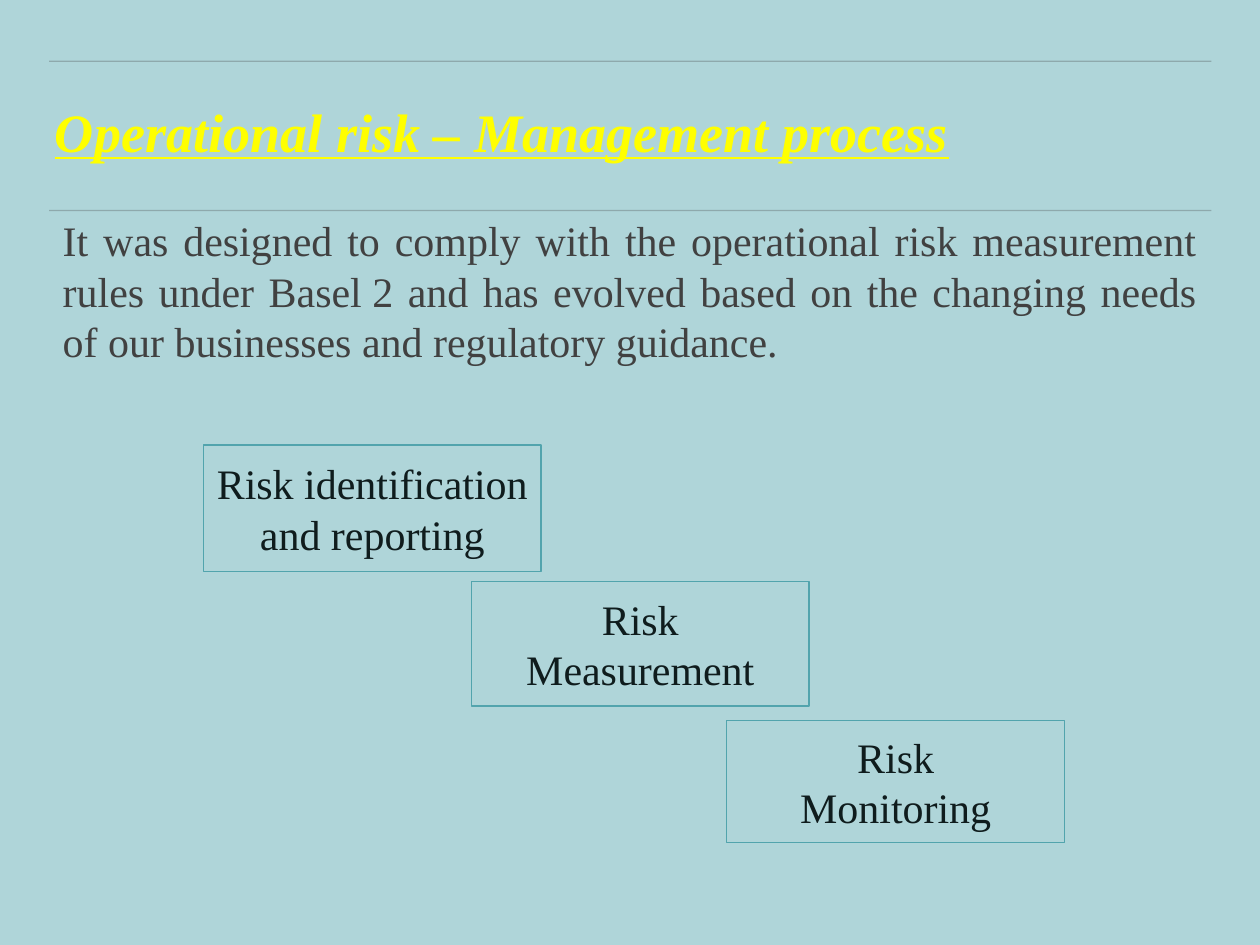
from lxml.etree import SubElement
from pptx import Presentation
from pptx.dml.color import RGBColor
from pptx.enum.shapes import MSO_CONNECTOR, MSO_SHAPE
from pptx.enum.text import MSO_ANCHOR, PP_ALIGN
from pptx.oxml.ns import qn
from pptx.util import Pt

# Content
TITLE = "Operational risk – Management process"
INTRO = ("It was designed to comply with the operational risk measurement rules "
         "under Basel\N{NO-BREAK SPACE}2 and has evolved based on the changing "
         "needs of our businesses and regulatory guidance.")
# Steps: text, left, top, height
STEPS = [
    ("Risk identification and reporting", 165.4, 361.6, 102.8),
    ("Risk\nMeasurement", 383.2, 472.8, 101),
    ("Risk\nMonitoring", 590.7, 585.6, 99.4),
]
STEP_W = 274.4
RULES = [49.8, 171]
RULE_X, RULE_W = 40, 944.4
SIZE = 34.1


def color(code):
    return RGBColor.from_string(code)


def write(shape, text, size=SIZE, ink="0F1C1D", align=PP_ALIGN.CENTER,
          bold=False, inset=None, space=None):
    frame = shape.text_frame
    frame.word_wrap = True
    frame.vertical_anchor = MSO_ANCHOR.MIDDLE
    if inset is not None:
        frame.margin_left = frame.margin_right = Pt(inset)
        frame.margin_top = frame.margin_bottom = Pt(inset)
    for i, line in enumerate(text.split("\n")):
        para = frame.add_paragraph() if i else frame.paragraphs[0]
        para.alignment = align
        if space:
            para.line_spacing = space
        run = para.add_run()
        run.text = line
        font = run.font
        font.name, font.size = "Times New Roman", Pt(size)
        font.color.rgb = color(ink)
        font.bold = font.italic = font.underline = bold


def box(left, top, width, height, fill=None, line=None):
    shape = slide.shapes.add_shape(
        MSO_SHAPE.RECTANGLE, Pt(left), Pt(top), Pt(width), Pt(height))
    shape.shadow.inherit = False
    if fill:
        shape.fill.solid()
        shape.fill.fore_color.rgb = color(fill)
    else:
        shape.fill.background()
    if line:
        shape.line.color.rgb = color(line)
        shape.line.width = Pt(1)
    else:
        shape.line.fill.background()
    return shape


def rule(top):
    line = slide.shapes.add_connector(
        MSO_CONNECTOR.STRAIGHT, Pt(RULE_X), Pt(top), Pt(RULE_X + RULE_W), Pt(top))
    line.line.color.rgb = color("444444")
    line.line.width = Pt(1)
    props = line._element.spPr
    tint = next(props.iter(qn("a:srgbClr")))
    SubElement(tint, qn("a:alpha")).set("val", "30000")
    SubElement(props, qn("a:effectLst"))


# Slide
deck = Presentation()
deck.slide_width, deck.slide_height = Pt(1024), Pt(768)
slide = deck.slides.add_slide(deck.slide_layouts[6])
slide.background.fill.solid()
slide.background.fill.fore_color.rgb = color("AFD5D9")

# Rules around the title
for top in RULES:
    rule(top)

# Title
write(box(44.7, 55.4, 801.4, 108), TITLE, size=44, ink="FFFF00",
      align=PP_ALIGN.LEFT, bold=True, inset=0, space=0.9)

# Introduction
intro = slide.shapes.add_textbox(Pt(51), Pt(174), Pt(921.6), Pt(124))
write(intro, INTRO, ink="414141", align=PP_ALIGN.JUSTIFY, inset=0)

# Process steps
for text, left, top, height in STEPS:
    write(box(left, top, STEP_W, height, line="52A4AD"), text)

deck.save("out.pptx")
